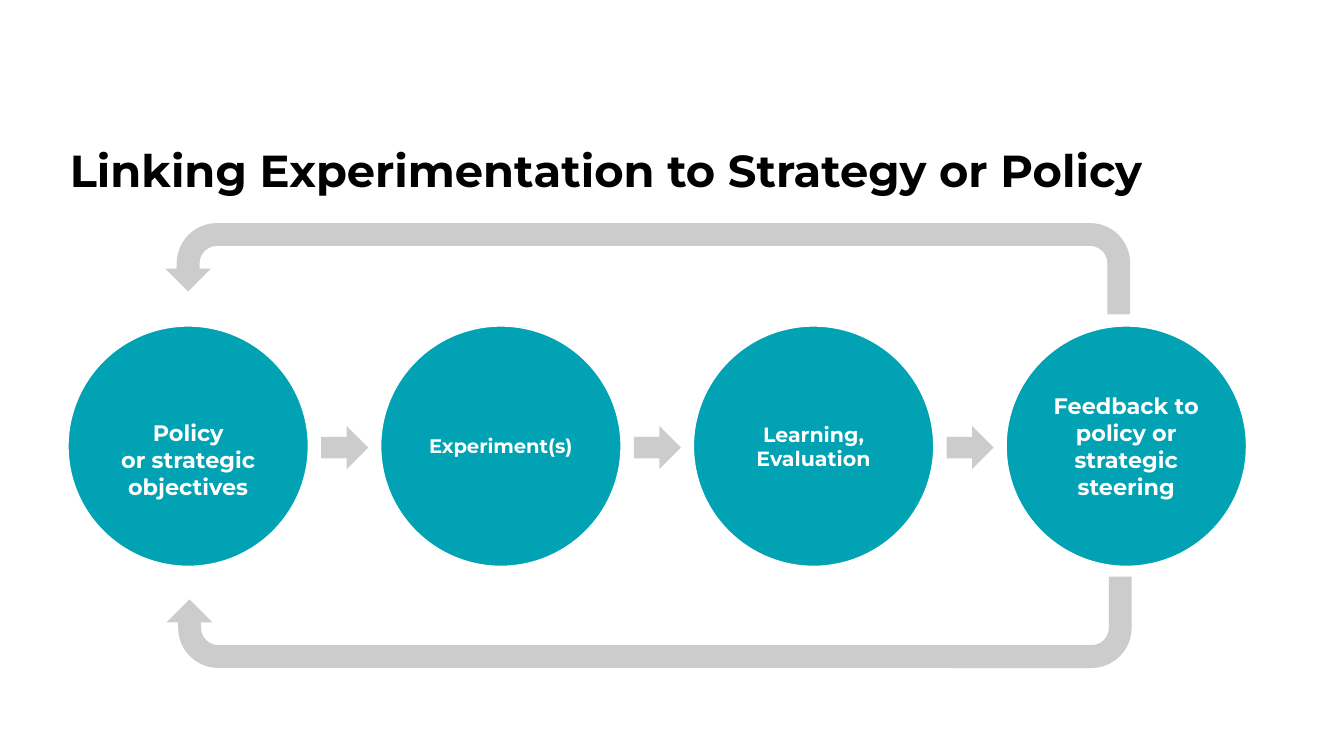
from pptx import Presentation
from pptx.dml.color import RGBColor
from pptx.enum.shapes import MSO_SHAPE
from pptx.enum.text import MSO_ANCHOR, MSO_AUTO_SIZE, PP_ALIGN
from pptx.util import Inches, Pt

TEAL, GREY, WHITE, BLACK = "00A2B3", "CCCCCC", "FFFFFF", "000000"


def write(shape, text, size, color, align=PP_ALIGN.CENTER, anchor=MSO_ANCHOR.MIDDLE, top=0.1):
    """Fill a shape with bold text, one paragraph per line."""
    frame = shape.text_frame
    frame.word_wrap = True
    frame.auto_size = MSO_AUTO_SIZE.NONE
    frame.vertical_anchor = anchor
    frame.margin_left = frame.margin_right = frame.margin_bottom = Inches(0.1)
    frame.margin_top = Inches(top)
    frame.text = text
    for para in frame.paragraphs:
        para.alignment = align
        para.space_before = Pt(0)
        for span in para.runs:
            span.font.name = "Montserrat"
            span.font.size = Pt(size)
            span.font.bold = True
            span.font.color.rgb = RGBColor.from_string(color)


def add_filled(kind, left, top, width, height, color):
    """Add a flat preset shape without outline."""
    shape = page.shapes.add_shape(kind, Inches(left), Inches(top), Inches(width), Inches(height))
    shape.shadow.inherit = False
    shape.fill.solid()
    shape.fill.fore_color.rgb = RGBColor.from_string(color)
    shape.line.fill.background()
    return shape


# Widescreen page, 16:9
deck = Presentation()
deck.slide_width, deck.slide_height = Inches(10), Inches(10 * 9 / 16)
page = deck.slides.add_slide(deck.slide_layouts[5])

# Title
title = page.shapes.title
title.left, title.top, title.width, title.height = Inches(0.42), Inches(0.58), Inches(9), Inches(0.98)
write(title, "Linking Experimentation to Strategy or Policy", 24, BLACK,
      align=PP_ALIGN.LEFT, anchor=MSO_ANCHOR.BOTTOM)

# Steps in circles, with an arrow between neighbours
steps = [
    ("Policy\nor strategic\nobjectives", 12, 0.3),
    ("Experiment(s)", 10.5, 0.1),
    ("Learning, Evaluation", 11, 0.1),
    ("Feedback to policy or strategic steering", 12, 0.1),
]
first_left, last_left, diameter = 0.49, 7.47, 1.82
pitch = (last_left - first_left) / (len(steps) - 1)
for index, (label, size, top_margin) in enumerate(steps):
    left = first_left + index * pitch
    circle = add_filled(MSO_SHAPE.OVAL, left, 2.41, diameter, diameter, TEAL)
    circle.line.color.rgb = RGBColor.from_string(WHITE)
    circle.line.width = Pt(3)
    write(circle, label, size, WHITE, top=top_margin)
    if index < len(steps) - 1:
        add_filled(MSO_SHAPE.RIGHT_ARROW, left + diameter + 0.08, 3.17, 0.35, 0.32, GREY)

# Feedback loops from the last step to the first
upper_loop = add_filled(MSO_SHAPE.U_TURN_ARROW, 1.23, 1.66, 7.18, 0.68, GREY)
upper_loop._element.spPr.xfrm.set("flipH", "1")
lower_loop = add_filled(MSO_SHAPE.U_TURN_ARROW, 1.24, 4.29, 7.18, 0.68, GREY)
lower_loop.rotation = 180
for loop in (upper_loop, lower_loop):
    for index, value in enumerate((0.25, 0.25, 0.25, 0.44, 0.75)):
        loop.adjustments[index] = value

deck.save("out.pptx")
